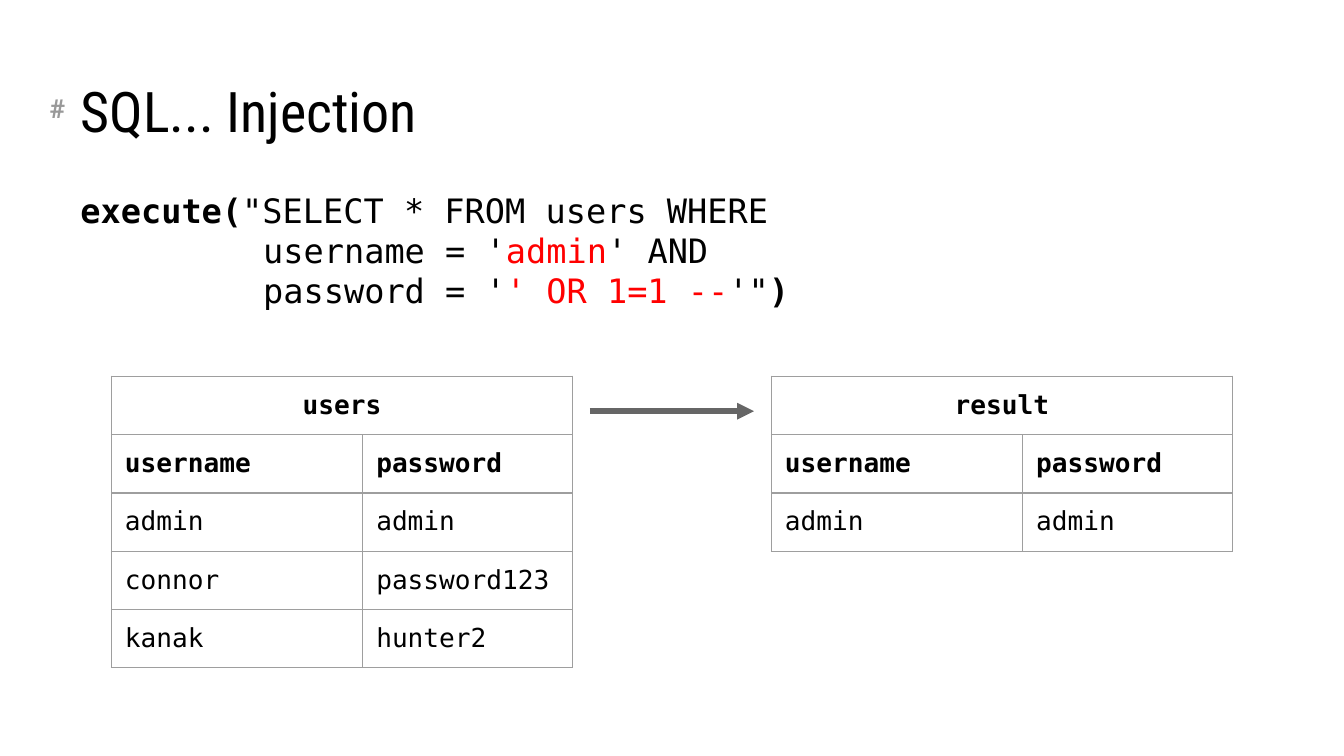
from dataclasses import dataclass

from lxml import etree
from pptx import Presentation
from pptx.dml.color import RGBColor
from pptx.enum.shapes import MSO_CONNECTOR
from pptx.enum.text import MSO_ANCHOR, PP_ALIGN
from pptx.oxml.ns import qn
from pptx.util import Inches, Pt

STRAIGHT = MSO_CONNECTOR.STRAIGHT
TOP, BOTTOM = MSO_ANCHOR.TOP, MSO_ANCHOR.BOTTOM
LEFT, CENTER = PP_ALIGN.LEFT, PP_ALIGN.CENTER

COLORS = {"text": "000000", "muted": "999999", "input": "FF0000",
          "border": "9E9E9E", "arrow": "666666"}
MONO = "DejaVu Sans Mono"
SLIDE_WIDTH = 10
SLIDE_HEIGHT = SLIDE_WIDTH * 9 / 16
INSET = Inches(0.1)
CODE_INDENT = Inches(1.36)
TABLE_TOP = 2.8
COLUMN_WIDTHS = (1.87, 1.56)
ROW_HEIGHT = 0.37
HEADER = ("username", "password")


@dataclass
class DataTable:
    name: str
    left: float
    records: list[tuple[str, str]]


@dataclass
class Code:
    text: str
    color: str = "text"
    bold: bool = False


TABLES = [
    DataTable("users", 0.83, [("admin", "admin"), ("connor", "password123"),
                              ("kanak", "hunter2")]),
    DataTable("result", 5.74, [("admin", "admin")]),
]
QUERY = [
    [Code("execute(", bold=True), Code('"SELECT * FROM users WHERE')],
    [Code("username = '"), Code("admin", "input"), Code("' AND")],
    [Code("password = '"), Code("' OR 1=1 --", "input"), Code("'\""),
     Code(")", bold=True)],
]


def add_text(p, text: str, *, size: float = 14, font: str = MONO,
             color: str = "text", bold: bool = False) -> None:
    r = p.add_run()
    r.text = text
    r.font.size = Pt(size)
    r.font.name = font
    r.font.bold = bold
    r.font.color.rgb = RGBColor.from_string(COLORS[color])


def add_box(s, left: float, top: float, width: float, height: float, anchor=TOP):
    """Add a wrapping text box and return its first paragraph."""
    tf = s.shapes.add_textbox(Inches(left), Inches(top),
                              Inches(width), Inches(height)).text_frame
    tf.word_wrap = True
    tf.vertical_anchor = anchor
    tf.margin_left = tf.margin_right = tf.margin_top = tf.margin_bottom = INSET
    return tf.paragraphs[0]


def add_query(s) -> None:
    p = add_box(s, 0.5, 1.31, 9, 4.07)
    p.line_spacing = 1.0
    p.space_after = Pt(10)
    props = p._p.get_or_add_pPr()
    props.set("marL", str(CODE_INDENT))
    props.set("indent", str(-CODE_INDENT))
    for i, line in enumerate(QUERY):
        if i:
            p.add_line_break()
        for code in line:
            add_text(p, code.text, size=18, color=code.color, bold=code.bold)


def format_cell(cell) -> None:
    cell.margin_left = cell.margin_right = INSET
    cell.margin_top = cell.margin_bottom = INSET
    cell.vertical_anchor = TOP
    props = cell._tc.get_or_add_tcPr()
    for side in ("lnL", "lnR", "lnT", "lnB"):
        ln = etree.SubElement(props, qn(f"a:{side}"), w=str(Pt(0.75)))
        fill = etree.SubElement(ln, qn("a:solidFill"))
        etree.SubElement(fill, qn("a:srgbClr"), val=COLORS["border"])
    cell.fill.background()


def add_data_table(s, data: DataTable) -> None:
    rows = [(data.name, ""), HEADER, *data.records]
    table = s.shapes.add_table(
        len(rows), len(HEADER), Inches(data.left), Inches(TABLE_TOP),
        Inches(sum(COLUMN_WIDTHS)), Inches(ROW_HEIGHT * len(rows))).table
    table.first_row = table.horz_banding = False
    for column, width in zip(table.columns, COLUMN_WIDTHS):
        column.width = Inches(width)
    table.cell(0, 0).merge(table.cell(0, 1))
    for i, values in enumerate(rows):
        table.rows[i].height = Inches(ROW_HEIGHT)
        for j, value in enumerate(values):
            cell = table.cell(i, j)
            format_cell(cell)
            if value:
                p = cell.text_frame.paragraphs[0]
                p.alignment = CENTER if i == 0 else LEFT
                add_text(p, value, bold=i < 2)


def add_arrow(s, x1: float, x2: float, y: float) -> None:
    arrow = s.shapes.add_connector(STRAIGHT, Inches(x1), Inches(y),
                                   Inches(x2), Inches(y))
    arrow.line.width = Pt(3)
    arrow.line.color.rgb = RGBColor.from_string(COLORS["arrow"])
    etree.SubElement(arrow.line._get_or_add_ln(), qn("a:tailEnd"), type="triangle")
    etree.SubElement(arrow._element.spPr, qn("a:effectLst"))


def main() -> None:
    prs = Presentation()
    prs.slide_width, prs.slide_height = Inches(SLIDE_WIDTH), Inches(SLIDE_HEIGHT)
    s = prs.slides.add_slide(prs.slide_layouts[6])
    add_text(add_box(s, 0.27, 0.59, 0.31, 0.47), "#",
             font="Roboto", color="muted", bold=True)
    add_text(add_box(s, 0.5, 0.23, 9, 0.94, BOTTOM), "SQL... Injection",
             size=30, font="Roboto Condensed")
    add_query(s)
    for data in TABLES:
        add_data_table(s, data)
    add_arrow(s, 4.39, 5.61, 3.06)
    prs.save("out.pptx")


if __name__ == "__main__":
    main()
